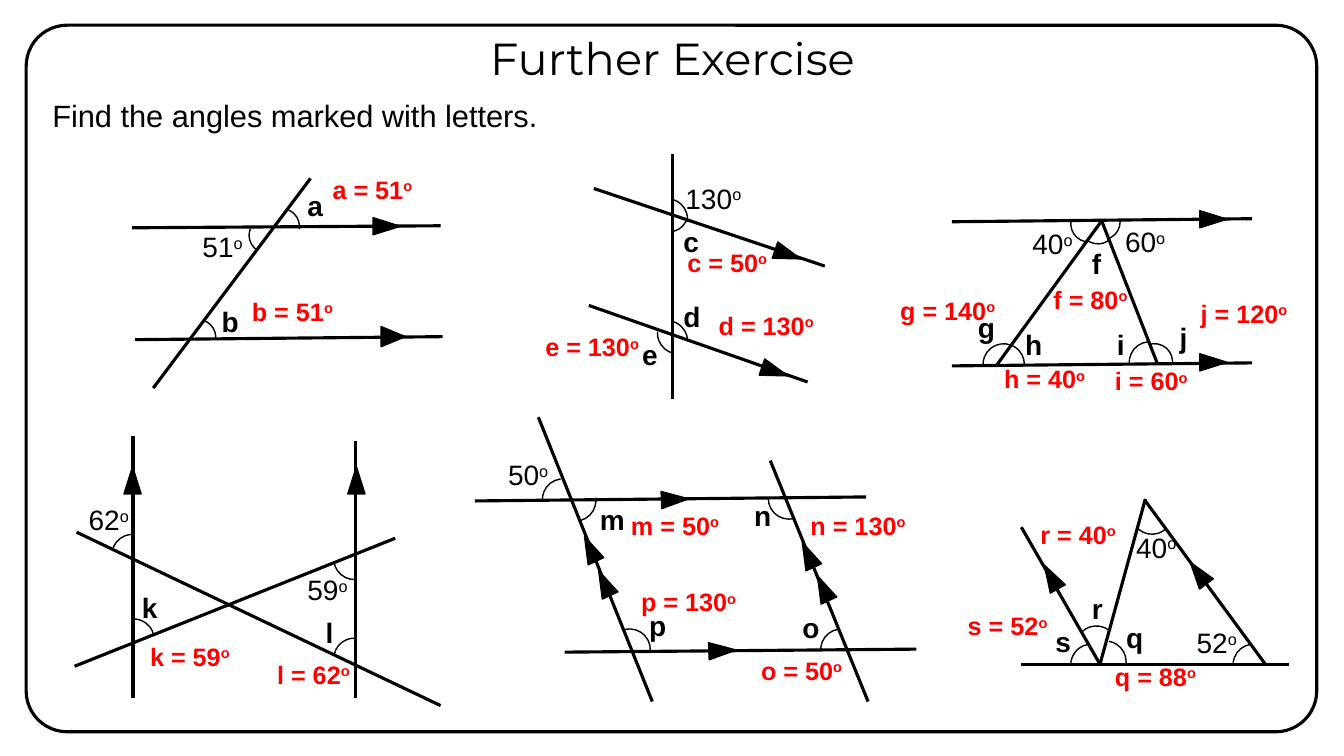
from dataclasses import dataclass

from lxml import etree
from pptx import Presentation
from pptx.dml.color import RGBColor
from pptx.enum.shapes import MSO_CONNECTOR, MSO_SHAPE
from pptx.enum.text import MSO_AUTO_SIZE, PP_ALIGN
from pptx.oxml.ns import qn
from pptx.util import Cm, Pt

STRAIGHT = MSO_CONNECTOR.STRAIGHT
ROUND_RECT, ARC, TRIANGLE = MSO_SHAPE.ROUNDED_RECTANGLE, MSO_SHAPE.ARC, MSO_SHAPE.ISOSCELES_TRIANGLE
FIT, CENTER, LEFT = MSO_AUTO_SIZE.SHAPE_TO_FIT_TEXT, PP_ALIGN.CENTER, PP_ALIGN.LEFT

# Arc spans: start and end in degrees, before rotation
NEAR = (3.01, 84.45)
TOP = (247.2, 331.91)
BROAD = (221.43, 331.91)
TIP = (268.31, 339.07)


def units(*values):
    """Turn drawing units of 2.54 cm into lengths."""
    return [Cm(2.54 * v) for v in values]


def rgb(color):
    return RGBColor.from_string(color)


@dataclass
class Sheet:
    s: object
    font: str = "Arial"
    ink: str = "000000"
    paper: str = "FFFFFF"
    answer_ink: str = "FF0000"

    def shape(self, kind, box, fill=None, weight=1.0, rot=0):
        sp = self.s.shapes.add_shape(kind, *units(*box))
        sp.shadow.inherit = False
        sp.rotation = rot
        if fill:
            sp.fill.solid()
            sp.fill.fore_color.rgb = rgb(fill)
        else:
            sp.fill.background()
        sp.line.color.rgb = rgb(self.ink)
        sp.line.width = Pt(weight)
        return sp

    def frame(self, *box):
        self.shape(ROUND_RECT, box, self.paper, 2.25).adjustments[0] = 0.058

    def line(self, *ends):
        cxn = self.s.shapes.add_connector(STRAIGHT, *units(*ends))
        cxn.line.color.rgb = rgb(self.ink)
        cxn.line.width = Pt(2.25)
        etree.SubElement(cxn._element.spPr, qn("a:effectLst"))

    def arc(self, x, y, rot, span=TOP, size=0.41):
        sp = self.shape(ARC, (x, y, size, size), rot=rot)
        for i, angle in enumerate(span):
            sp.adjustments[i] = angle * 0.6

    def arrow(self, x, y, rot=0, w=0.17, h=0.27):
        self.shape(TRIANGLE, (x, y, w, h), self.ink, rot=rot)

    def text(self, box, words, size, color=None, bold=False, font=None, align=LEFT, degrees=False):
        tf = self.s.shapes.add_textbox(*units(*box)).text_frame
        tf.word_wrap = True
        tf.auto_size = FIT
        p = tf.paragraphs[0]
        p.alignment = align
        for part in [words, "o"] if degrees else [words]:
            r = p.add_run()
            r.text = part
            r.font.name = font or self.font
            r.font.size = Pt(size)
            r.font.bold = bold
            r.font.color.rgb = rgb(color or self.ink)
        if degrees:
            r._r.get_or_add_rPr().set("baseline", "30000")

    def letter(self, x, y, name):
        self.text((x, y, 0.32, 0.44), name, 20, bold=True)

    def given(self, x, y, value):
        width = 0.83 if value > 99 else 0.68
        self.text((x, y, width, 0.44), str(value), 20, degrees=True)

    def answer(self, x, y, name, value):
        width = 1.33 if value > 99 else 1.17
        self.text((x, y, width, 0.4), f"{name} = {value}", 18, self.answer_ink, True, degrees=True)

    def exercise(self, **parts):
        """Draw each list of arguments with the method of the same name."""
        for kind, rows in parts.items():
            for row in rows:
                getattr(self, kind)(*row)


def main():
    prs = Presentation()
    prs.slide_width, prs.slide_height = units(13.33, 7.5)
    sheet = Sheet(prs.slides.add_slide(prs.slide_layouts[6]))
    sheet.frame(0.26, 0.25, 12.8, 7.01)
    sheet.text((3.58, 0.26, 6.18, 0.64), "Further Exercise", 32, font="Montserrat", align=CENTER)
    sheet.text((0.42, 0.91, 6.55, 0.47), "Find the angles marked with letters.", 22)

    # Two parallels and a transversal
    sheet.exercise(
        line=[(1.31, 2.26, 4.37, 2.24), (3.08, 1.77, 1.52, 3.85), (1.34, 3.37, 4.39, 3.34)],
        arc=[(2.47, 2.16, 117.9, NEAR, 0.35), (2.62, 2.07, 283.8, NEAR, 0.35),
             (1.79, 3.17, 283.8, NEAR, 0.35)],
        arrow=[(3.75, 2.11, 90), (3.8, 3.22, 90, 0.2, 0.24)],
        given=[(1.91, 2.23, 51)],
        letter=[(2.95, 1.82, "a"), (2.1, 2.97, "b")],
        answer=[(3.2, 1.68, "a", 51), (2.4, 2.89, "b", 51)],
    )
    # Sloping parallels and a vertical
    sheet.exercise(
        line=[(6.67, 3.96, 6.67, 1.53), (5.89, 1.87, 8.18, 2.64), (5.84, 3.03, 8.01, 3.79)],
        arc=[(6.41, 1.97, 283.8, NEAR), (6.41, 3.18, 283.8, (3.01, 76.62)),
             (6.52, 3.1, 99.5, NEAR), (6.46, 1.94, 14.2, (3.01, 65.97), 0.36)],
        arrow=[(7.73, 2.39, 108.9), (7.6, 3.55, 108.9)],
        given=[(6.7, 1.75, 130)],
        letter=[(6.68, 2.18, "c"), (6.68, 2.92, "d"), (6.27, 3.3, "e")],
        answer=[(6.72, 2.4, "c", 50), (7.03, 3.03, "d", 130), (5.31, 3.24, "e", 130)],
    )
    # Triangle between parallels
    sheet.exercise(
        line=[(12.42, 2.17, 9.44, 2.2), (12.42, 3.6, 9.44, 3.63),
              (10.92, 2.2, 9.88, 3.63), (10.93, 2.2, 11.48, 3.61)],
        arc=[(10.75, 2.02, 90, TIP, 0.36), (10.62, 2.04, 206.8, (256.39, 339.07), 0.36),
             (10.71, 2.06, 147.4, TIP, 0.36), (11.27, 3.41, 25.8, (227.05, 339.07), 0.36),
             (11.2, 3.39, 310.2, (227.05, 314.5)), (9.75, 3.41, 47.3, (247.2, 314.5)),
             (9.75, 3.41, 291.4, (247.2, 359.6))],
        arrow=[(11.95, 2.04, 90), (11.95, 3.46, 90)],
        given=[(10.14, 2.2, 40), (11.06, 2.18, 60)],
        letter=[(10.73, 2.4, "f"), (9.6, 3.03, "g"), (10.07, 3.2, "h"),
                (10.98, 3.2, "i"), (11.6, 3.13, "j")],
        answer=[(10.35, 2.77, "f", 80), (8.83, 2.88, "g", 140), (9.86, 3.56, "h", 40),
                (10.96, 3.58, "i", 60), (11.81, 2.91, "j", 120)],
    )
    # Vertical parallels with crossing lines
    sheet.exercise(
        line=[(1.32, 4.33, 1.32, 6.92), (3.53, 4.38, 3.53, 6.92),
              (3.92, 5.34, 0.74, 6.61), (4.37, 7, 0.76, 5.28)],
        arc=[(3.31, 6.33, 188.5, NEAR), (1.11, 5.3, 188.5, NEAR),
             (1.12, 6.14, 262, NEAR), (3.31, 5.34, 85.2, NEAR)],
        arrow=[(3.45, 4.63), (1.23, 4.63)],
        given=[(0.78, 4.94, 62), (2.95, 5.63, 59)],
        letter=[(1.31, 5.81, "k"), (3.13, 6.06, "l")],
        answer=[(1.39, 6.31, "k", 59), (2.65, 6.49, "l", 62)],
    )
    # Parallelogram
    sheet.exercise(
        line=[(4.71, 4.97, 8.59, 4.93), (5.6, 6.47, 9.09, 6.44),
              (5.34, 4.14, 6.47, 6.96), (7.64, 4.57, 8.61, 6.96)],
        arc=[(5.38, 4.75, 291.4), (8.14, 6.24, 291.4), (5.5, 4.76, 105),
             (6.04, 6.24, 33.3, BROAD), (7.62, 4.74, 211.2, BROAD)],
        arrow=[(6.61, 4.82, 87.4), (7.08, 6.32, 87.4), (5.77, 5.31, 335.1),
               (5.91, 5.65, 335.1), (7.93, 5.37, 335.1), (8.08, 5.7, 335.1)],
        given=[(4.94, 4.49, 50)],
        letter=[(5.85, 4.94, "m"), (6.34, 5.99, "p"), (7.86, 6.01, "o"), (7.38, 4.9, "n")],
        answer=[(6.16, 5.01, "m", 50), (7.94, 5.01, "n", 130),
                (7.45, 6.45, "o", 50), (6.26, 5.77, "p", 130)],
    )
    # Triangle with a parallel side
    sheet.exercise(
        line=[(10.13, 5.23, 10.91, 6.59), (10.13, 6.59, 12.78, 6.59),
              (11.36, 4.97, 12.55, 6.59), (11.36, 4.95, 10.91, 6.59)],
        arc=[(10.62, 6.39, 291.4), (12.23, 6.39, 291.4), (11.22, 4.89, 161.1),
             (10.76, 6.36, 32.7), (10.67, 6.21, 339.8)],
        arrow=[(10.34, 5.59, 330.5), (11.8, 5.55, 323.3)],
        given=[(11.17, 5.21, 40), (11.77, 6.16, 52)],
        letter=[(11.07, 6.11, "q"), (10.37, 6.15, "s"), (10.73, 5.82, "r")],
        answer=[(10.96, 6.51, "q", 88), (9.5, 6.01, "s", 52), (10.22, 5.1, "r", 40)],
    )
    prs.save("out.pptx")


if __name__ == "__main__":
    main()
